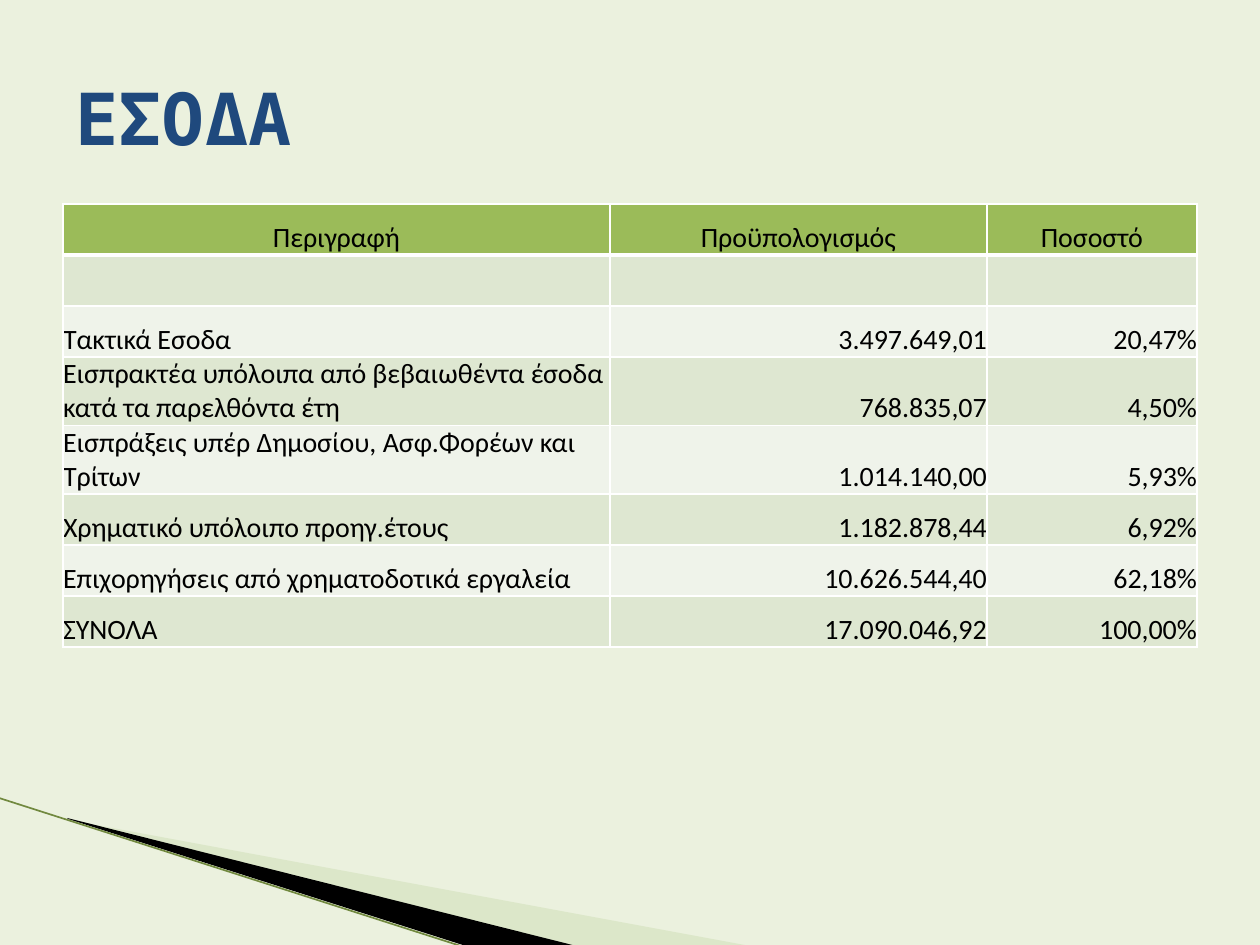
"""Build the revenue slide with its budget table."""
from typing import NamedTuple

from lxml import etree
from pptx import Presentation, util as u
from pptx.dml.color import RGBColor
from pptx.enum import shapes, text
from pptx.oxml import ns

SCALE = u.Inches(10) / 1260
FONT = "Calibri"
HUES = {
    "back": "EBF1DE", "title": "1F497D", "head": "9BBB59",
    "odd": "DEE7D1", "even": "EFF3EA", "rule": "FFFFFF",
    "ink": "000000", "leaf": "C6D9AA", "stem": "71893F",
}


class Row(NamedTuple):
    label: str = ""
    sum: str = ""
    share: str = ""


class Wedge(NamedTuple):
    points: list[tuple[int, int]]
    hue: str
    alpha: int = 100


ROWS = [
    Row("Περιγραφή", "Προϋπολογισμός", "Ποσοστό"),
    Row(),
    Row("Τακτικά Εσοδα", "3.497.649,01", "20,47%"),
    Row("Εισπρακτέα υπόλοιπα από βεβαιωθέντα έσοδα κατά τα παρελθόντα έτη",
        "768.835,07", "4,50%"),
    Row("Εισπράξεις υπέρ Δημοσίου, Ασφ.Φορέων και Τρίτων",
        "1.014.140,00", "5,93%"),
    Row("Χρηματικό υπόλοιπο προηγ.έτους", "1.182.878,44", "6,92%"),
    Row("Επιχορηγήσεις από χρηματοδοτικά εργαλεία", "10.626.544,40", "62,18%"),
    Row("ΣΥΝΟΛΑ", "17.090.046,92", "100,00%"),
]
WIDTHS = [547, 377, 210]
HEIGHT = 51
WEDGES = [
    Wedge([(69, 820), (750, 946), (575, 946), (69, 819)], "leaf", 40),
    Wedge([(67, 818), (576, 946), (469, 947), (68, 819)], "ink"),
]


def px(size: int) -> int:
    return round(size * SCALE)


def rgb(name: str) -> RGBColor:
    return RGBColor.from_string(HUES[name])


def add_wedge(slide, wedge: Wedge) -> None:
    start, *rest = wedge.points
    pen = slide.shapes.build_freeform(*start, scale=SCALE)
    pen.add_line_segments(rest)
    shape = pen.convert_to_shape()
    shape.shadow.inherit = False
    shape.line.fill.background()
    shape.fill.solid()
    shape.fill.fore_color.rgb = rgb(wedge.hue)
    if wedge.alpha < 100:
        color = shape.fill._xPr.find(".//" + ns.qn("a:srgbClr"))
        etree.SubElement(color, ns.qn("a:alpha"), val=str(wedge.alpha * 1000))


def add_stem(slide) -> None:
    line = slide.shapes.add_connector(
        shapes.MSO_CONNECTOR.STRAIGHT, px(-1), px(798), px(467), px(948))
    line.line.color.rgb = rgb("stem")
    line.line.width = u.Pt(0.95)
    etree.SubElement(line._element.spPr, ns.qn("a:effectLst"))


def add_rules(cell, head: bool, below: bool) -> None:
    props = cell._tc.get_or_add_tcPr()
    widths = {"L": 1, "R": 1, "T": 3 if below else 1, "B": 3 if head else 1}
    for spot, (side, width) in enumerate(widths.items()):
        rule = etree.Element(ns.qn(f"a:ln{side}"), w=str(u.Pt(width)))
        fill = etree.SubElement(rule, ns.qn("a:solidFill"))
        etree.SubElement(fill, ns.qn("a:srgbClr"), val=HUES["rule"])
        props.insert(spot, rule)


def fill_cell(cell, words: str, r: int, c: int) -> None:
    cell.fill.solid()
    cell.fill.fore_color.rgb = rgb(
        "head" if r == 0 else "odd" if r % 2 else "even")
    add_rules(cell, r == 0, r == 1)
    cell.margin_left = cell.margin_right = 0
    cell.margin_top = cell.margin_bottom = 0
    cell.vertical_anchor = text.MSO_ANCHOR.BOTTOM
    cell.text_frame.text = words
    para = cell.text_frame.paragraphs[0]
    if r == 0:
        para.alignment = text.PP_ALIGN.CENTER
    else:
        para.alignment = text.PP_ALIGN.RIGHT if c else text.PP_ALIGN.LEFT
    for font in [para.font, *(run.font for run in para.runs)]:
        font.name, font.size, font.bold = FONT, u.Pt(16), False
        font.color.rgb = rgb("ink")


def add_grid(slide) -> None:
    table = slide.shapes.add_table(
        len(ROWS), len(WIDTHS), px(63), px(204),
        px(sum(WIDTHS)), px(HEIGHT * len(ROWS))).table
    for col, width in zip(table.columns, WIDTHS):
        col.width = px(width)
    for r, row in enumerate(ROWS):
        table.rows[r].height = px(HEIGHT)
        for c, words in enumerate(row):
            fill_cell(table.cell(r, c), words, r, c)


def set_title(slide) -> None:
    title = slide.shapes.title
    title.left, title.top = px(63), px(38)
    title.width, title.height = px(1134), px(158)
    frame = title.text_frame
    frame.text = "ΕΣΟΔΑ"
    frame.vertical_anchor = text.MSO_ANCHOR.MIDDLE
    para = frame.paragraphs[0]
    para.alignment = text.PP_ALIGN.LEFT
    font = para.runs[0].font
    font.name, font.size, font.bold = "DejaVu Sans Mono", u.Pt(41), True
    font.color.rgb = rgb("title")


def main() -> None:
    deck = Presentation()
    deck.slide_width, deck.slide_height = u.Inches(10), u.Inches(7.5)
    slide = deck.slides.add_slide(deck.slide_layouts[5])
    slide.background.fill.solid()
    slide.background.fill.fore_color.rgb = rgb("back")
    for wedge in WEDGES:
        add_wedge(slide, wedge)
    add_stem(slide)
    add_grid(slide)
    set_title(slide)
    deck.save("out.pptx")


if __name__ == "__main__":
    main()
